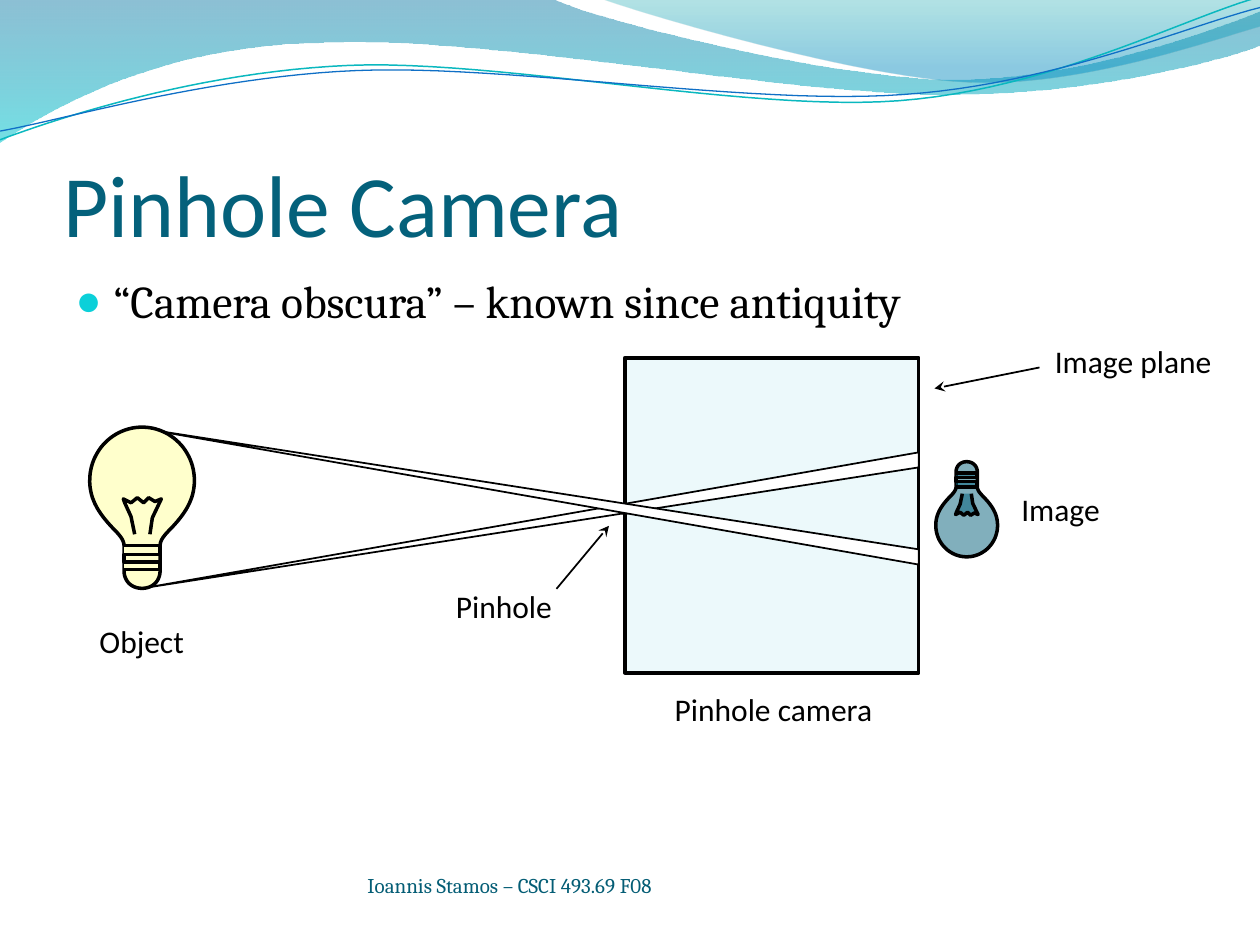
"""Build a slide that explains the pinhole camera with a light bulb and its image."""
import pptx
import pptx.dml.color
import pptx.enum.shapes
import pptx.enum.text
import pptx.oxml
import pptx.oxml.ns
import pptx.util
import lxml.etree as etree

Pt = pptx.util.Pt
qn = pptx.oxml.ns.qn
RGB = pptx.dml.color.RGBColor.from_string
text = pptx.enum.text
kinds = pptx.enum.shapes
hues = {"title": "04617B", "foot": "045D75", "black": "000000", "white": "FFFFFF",
        "bullet": "0BD0D9", "camera": "DBF5F9", "bulb": "FFFFCC",
        "deep": "0074A1", "aqua": "00C6CF", "teal": "00A1A9", "blue": "008BBF",
        "thin": "0AB8BF", "navy": "0F6FC6"}

deck = pptx.Presentation()
deck.slide_width, deck.slide_height = Pt(720), Pt(540)
slide = deck.slides.add_slide(deck.slide_layouts[1])
shapes = slide.shapes


def trace(start, parts, close=True):
    """Draw an outline from points and from cubic curves of six numbers."""
    dots, last = [], start
    for part in parts:
        if len(part) == 2:
            dots.append(part)
        else:
            ax, ay, bx, by, cx, cy = part
            for step in range(1, 25):
                t = step / 24
                u = 1 - t
                dots.append(tuple(u**3 * p + 3 * u * u * t * a + 3 * u * t * t * b + t**3 * c
                                  for p, a, b, c in zip(last, (ax, ay), (bx, by), (cx, cy))))
        last = part[-2:]
    pen = shapes.build_freeform(Pt(start[0]), Pt(start[1]))
    pen.add_line_segments([(Pt(x), Pt(y)) for x, y in dots], close=close)
    return pen.convert_to_shape()


def paint(shape, fill=None, line=None, width=1, alpha=100):
    """Set the fill, its opacity and the line of a shape."""
    shape.shadow.inherit = False
    if fill:
        shape.fill.solid()
        shape.fill.fore_color.rgb = RGB(hues[fill])
        tint = shape.fill._xPr.find(".//" + qn("a:srgbClr"))
        etree.SubElement(tint, qn("a:alpha"), val=str(alpha * 1000))
    else:
        shape.fill.background()
    if line:
        shape.line.color.rgb = RGB(hues[line])
        shape.line.width = Pt(width)
    else:
        shape.line.fill.background()


waves = [
    ((0, 0), [(316.8, 0), (342.7, 12.2, 478, 45.4, 545.8, 45.4),
              (614.2, 45.4, 689.8, 18.7, 720, 6.5), (720, 25.9),
              (707.8, 31.7, 626.4, 54.7, 537.1, 54), (447.8, 54, 275, 20.2, 185, 24.5),
              (92.9, 25.9, 33.1, 59.8, 0, 81.4)],
     [(0, "deep", 45), (1, "aqua", 55)]),
    ((344.9, 0), [(366.5, 7.9, 491, 44.6, 553.7, 46.8), (616.3, 49.7, 691.9, 23, 720, 15.1),
                  (720, 0)],
     [(0, "teal", 30), (0.8, "blue", 45)]),
]
for start, parts, stops in waves:
    wave = trace(start, parts)
    paint(wave)
    wave.fill.gradient()
    wave.fill.gradient_angle = 270
    for stop, (place, hue, alpha) in zip(wave.fill.gradient_stops, stops):
        stop.position = place
        stop.color.rgb = RGB(hues[hue])
        tint = stop._gs.find(qn("a:srgbClr"))
        etree.SubElement(tint, qn("a:alpha"), val=str(alpha * 1000))

curves = [
    ((0, 79.9), [(34.6, 67, 113.8, 41, 199.4, 37.4), (284.4, 33.8, 427, 64.1, 513.4, 57.6),
                 (599.8, 51.1, 675.4, 10.8, 718.6, -1.4)], "thin", 0.85),
    ((0, 74.9), [(33.8, 69.1, 118.1, 43.9, 203.8, 40.3), (290.2, 36.7, 429.8, 60.5, 516.2, 54),
                 (601.9, 48.2, 677.5, 15.1, 720, 4.3)], "navy", 0.75),
]
for start, parts, hue, width in curves:
    paint(trace(start, parts, False), None, hue, width)

camera = shapes.add_shape(kinds.MSO_SHAPE.RECTANGLE, Pt(357), Pt(204.5), Pt(168), Pt(180))
paint(camera, "camera", "black", 2, 50)
hole = shapes.add_shape(kinds.MSO_SHAPE.OVAL, Pt(354), Pt(288), Pt(6), Pt(6))
paint(hole, "camera", "black", 0)

half = [(0, 0), (16.5, 0, 29.9, 13.6, 29.9, 30.5), (29.9, 41, 25, 49, 16.7, 57.7),
        (12.5, 62, 10.3, 64.5, 10.3, 68), (10.3, 82), (10.3, 88, 6, 92.1, 0, 92.1)]
other = [(-10.3, 92.1 - 4.1 + 0, -10.3, 88, -10.3, 82)]
other = [(-6, 92.1, -10.3, 88, -10.3, 82), (-10.3, 68),
         (-10.3, 64.5, -12.5, 62, -16.7, 57.7), (-25, 49, -29.9, 41, -29.9, 30.5),
         (-29.9, 13.6, -16.5, 0, 0, 0)]
coil = [(-4.2, 61.2), (-6.3, 51.1), (-9.9, 43.2), (-10.7, 41), (-6.3, 43.2), (-2.7, 40.3),
        (0.9, 43.2), (3.8, 40.3), (7.4, 42.5), (11, 41), (5.9, 51.8), (4.5, 61.2)]
thread = [(-10.2, 67.7), (10.2, 67.7), (10.2, 72.7), (-10.2, 72.7),
          (-10.2, 77), (10.2, 77), (10.2, 81.4), (-10.2, 81.4)]
rays = [[(81.2, 336.2), (525, 267.1), (525, 258.5)],
        [(81.2, 244.8), (525, 313.9), (525, 322.6)]]
for ray in rays:
    paint(trace(ray[0], ray[1:]), "white", "black")

bulbs = [(81.2, 244.1, 1, 1, "bulb", 100), (552.4, 318.2, 0.59, -0.59, "title", 50)]
for left, top, wide, high, hue, alpha in bulbs:
    for run, close in ((half + other, True), (coil, False), (thread, False)):
        spots = [tuple(top + high * v if i % 2 else left + wide * v
                       for i, v in enumerate(part)) for part in run]
        paint(trace(spots[0], spots[1:], close), hue, "black", 2, alpha)

arrows = [(318, 336.5, 348, 300.5), (594, 210, 534, 222)]
for ends in arrows:
    arrow = shapes.add_connector(kinds.MSO_CONNECTOR.STRAIGHT, *map(Pt, ends))
    arrow.line.color.rgb = RGB(hues["black"])
    arrow.line.width = Pt(1)
    etree.SubElement(arrow.line._get_or_add_ln(), qn("a:tailEnd"), type="stealth")
    etree.SubElement(arrow._element.spPr, qn("a:effectLst"))

title, body = slide.placeholders
title.left, title.top, title.width, title.height = Pt(36), Pt(55.5), Pt(648), Pt(90)
body.left, body.top, body.width, body.height = Pt(36), Pt(152.5), Pt(648), Pt(345.5)
title.text_frame.text = "Pinhole Camera"
body.text_frame.text = "“Camera obscura” – known since antiquity"
frame = title.text_frame
frame.margin_left = frame.margin_right = frame.margin_bottom = 0
frame.vertical_anchor = text.MSO_ANCHOR.BOTTOM
for frame in (title.text_frame, body.text_frame):
    frame.auto_size = text.MSO_AUTO_SIZE.NONE
    frame.paragraphs[0].alignment = text.PP_ALIGN.LEFT
    frame.paragraphs[0].space_before = Pt(0)

props = body.text_frame.paragraphs[0]._p.get_or_add_pPr()
props.set("marL", str(Pt(21.6)))
props.set("indent", str(-Pt(21.6)))
color = etree.SubElement(props, qn("a:buClr"))
etree.SubElement(color, qn("a:srgbClr"), val=hues["bullet"])
etree.SubElement(props, qn("a:buSzPct"), val="95000")
etree.SubElement(props, qn("a:buChar"), char="●")

styles = [(title, "Calibri", 50, "title"), (body, "Cambria", 26, "black")]
labels = [("Pinhole", 252, 332, 72), ("Object", 48, 352, 66),
          ("Pinhole camera", 376, 391, 132), ("Image", 576, 276.5, 60),
          ("Image plane", 594, 192, 107)]
for words, left, top, width in labels:
    label = shapes.add_textbox(Pt(left), Pt(top), Pt(width), Pt(29))
    label.text_frame.text = words
    label.text_frame.word_wrap = False
    label.text_frame.paragraphs[0].alignment = text.PP_ALIGN.CENTER
    styles.append((label, "Calibri", 18, "black"))

foot = shapes.add_textbox(Pt(210), Pt(498), Pt(264), Pt(15))
frame = foot.text_frame
frame.text = "Ioannis Stamos – CSCI 493.69 F08"
frame.word_wrap = True
frame.margin_left = frame.margin_right = frame.margin_top = frame.margin_bottom = 0
frame.vertical_anchor = text.MSO_ANCHOR.BOTTOM
styles.append((foot, "Cambria", 12, "foot"))

for box, face, size, hue in styles:
    font = box.text_frame.paragraphs[0].font
    font.name, font.size = face, Pt(size)
    font.color.rgb = RGB(hues[hue])

deck.save("out.pptx")
